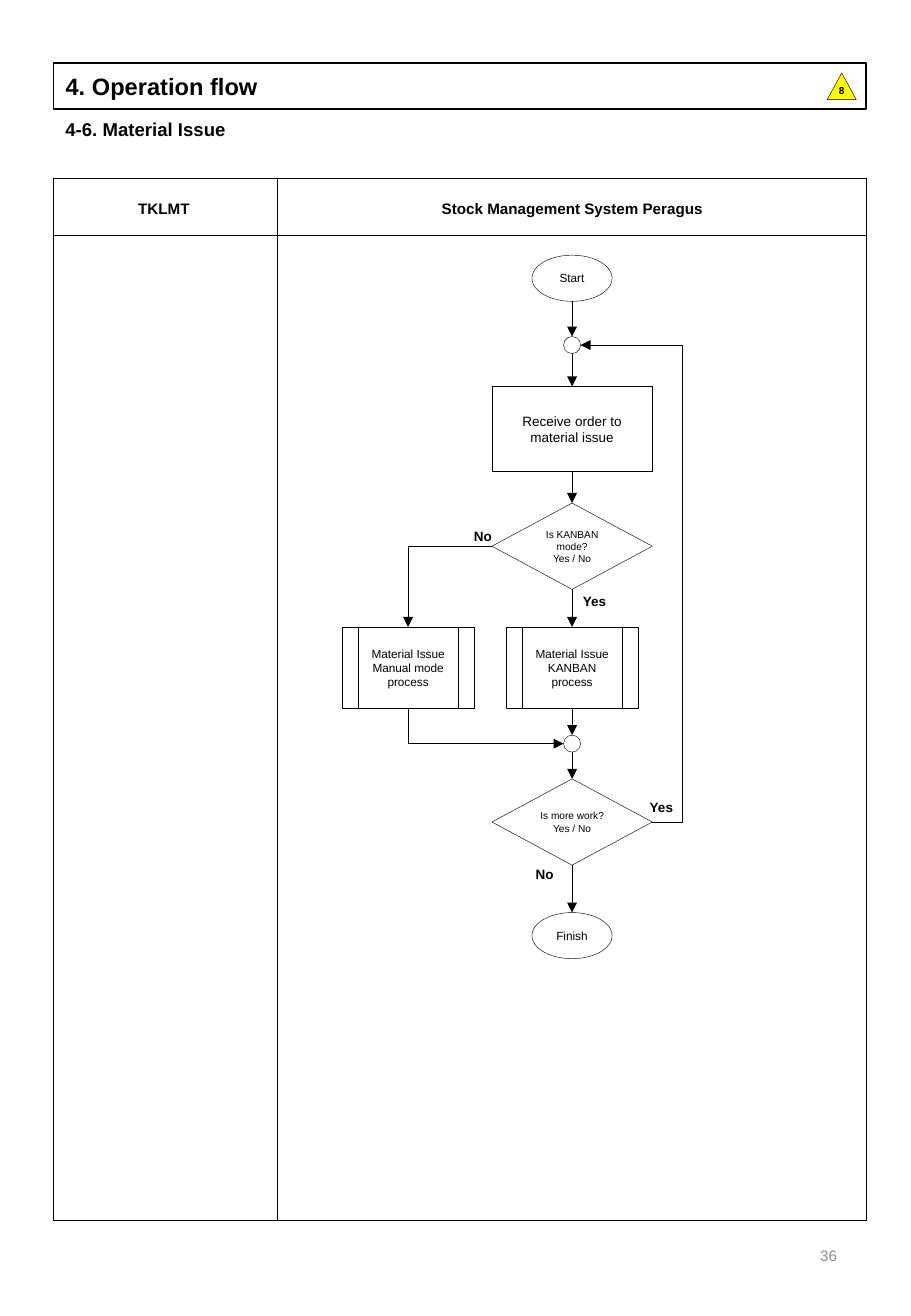
from pptx import Presentation, util as u
from pptx.dml.color import RGBColor
from pptx.enum import shapes, text
from pptx.oxml.ns import qn
from lxml import etree

KIND = shapes.MSO_SHAPE
ALIGN = text.PP_ALIGN
ANCHOR = text.MSO_ANCHOR
AXIS = 4.71
MANUAL_AXIS = 3.36


def color(hex_string):
    return RGBColor.from_string(hex_string)


class FlowPage:
    """Draws flowchart elements on one slide in a single style."""

    font = "Arial"
    ink = "000000"

    def __init__(self, slide):
        self.slide = slide

    def set_text(self, shape, words, size, bold=False, ink=None, align=ALIGN.CENTER,
                 anchor=ANCHOR.MIDDLE, insets=(0.1, 0.05, 0.1, 0.05)):
        frame = shape.text_frame
        frame.text = words
        settings = {"word_wrap": True, "auto_size": text.MSO_AUTO_SIZE.NONE,
                    "vertical_anchor": anchor}
        sides = ("margin_left", "margin_top", "margin_right", "margin_bottom")
        settings.update(zip(sides, map(u.Inches, insets)))
        for name, value in settings.items():
            setattr(frame, name, value)
        for paragraph in frame.paragraphs:
            paragraph.alignment = align
            paragraph.font.color.rgb = color(ink or self.ink)
            for name, value in {"name": self.font, "size": u.Pt(size), "bold": bold}.items():
                setattr(paragraph.font, name, value)

    def outline(self, item, width):
        item.line.color.rgb = color(self.ink)
        item.line.width = u.Pt(width)

    def title(self, words, left, top, width, height):
        shape = self.slide.shapes.title
        for name, value in {"left": left, "top": top, "width": width, "height": height}.items():
            setattr(shape, name, u.Inches(value))
        self.outline(shape, 1)
        self.set_text(shape, words, 14, bold=True, align=ALIGN.LEFT)

    def label(self, words, left, top, width, height, size, **style):
        box = self.slide.shapes.add_textbox(*map(u.Inches, (left, top, width, height)))
        self.set_text(box, words, size, **style)

    def shape(self, kind, left, top, width, height, words="", size=7, fill=None, **style):
        shape = self.slide.shapes.add_shape(kind, *map(u.Inches, (left, top, width, height)))
        shape.shadow.inherit = False
        if fill:
            shape.fill.solid()
            shape.fill.fore_color.rgb = color(fill)
        else:
            shape.fill.background()
        self.outline(shape, 0.25)
        if words:
            self.set_text(shape, words, size, **style)
        return shape

    def node(self, kind, axis, top, width, height, words="", size=7, **style):
        return self.shape(kind, axis - width / 2, top, width, height, words, size, **style)

    def line(self, start, end, kind=shapes.MSO_CONNECTOR.STRAIGHT, arrow=True):
        connector = self.slide.shapes.add_connector(kind, *map(u.Inches, start + end))
        self.outline(connector, 0.5)
        properties = connector._element.spPr
        if arrow:
            etree.SubElement(properties.find(qn("a:ln")), qn("a:tailEnd"), type="triangle")
        etree.SubElement(properties, qn("a:effectLst"))
        return connector

    def bend(self, start, end, turn):
        connector = self.line(start, end, shapes.MSO_CONNECTOR.ELBOW)
        guides = connector._element.spPr.find(qn("a:prstGeom")).find(qn("a:avLst"))
        etree.SubElement(guides, qn("a:gd"), name="adj1", fmla=f"val {round(turn * 100000)}")

    def step(self, source, target):
        start = (source.left + source.width / 2, source.top + source.height)
        end = (target.left + target.width / 2, target.top)
        connector = self.line(*(tuple(u.Emu(round(value)).inches for value in point)
                                for point in (start, end)))
        if source.auto_shape_type != KIND.OVAL:
            connector.begin_connect(source, 2)
        if target.auto_shape_type != KIND.OVAL:
            connector.end_connect(target, 0)


def main():
    presentation = Presentation()
    presentation.slide_width = u.Inches(7.5)
    presentation.slide_height = u.Inches(10.83)
    page = FlowPage(presentation.slides.add_slide(presentation.slide_layouts[5]))

    page.title("4. Operation flow", 0.44, 0.52, 6.69, 0.38)
    page.label("4-6. Material Issue", 0.44, 0.92, 6.69, 0.29, 11, bold=True,
               align=ALIGN.LEFT, anchor=ANCHOR.TOP)
    page.shape(KIND.ISOSCELES_TRIANGLE, 6.81, 0.6, 0.24, 0.22, "8", 6, fill="FFFF00",
               bold=True, insets=(0.1, 0, 0.1, 0.05))
    page.label("36", 5.3, 10.04, 1.69, 0.58, 9, ink="8C8C8C", align=ALIGN.RIGHT)

    for height in (8.57, 0.47):
        page.shape(KIND.RECTANGLE, 0.44, 1.47, 6.69, height)
    page.line((2.28, 1.47), (2.28, 10.04), arrow=False)
    for words, left, width in (("TKLMT", 0.43, 1.84),
                               ("Stock Management System Peragus", 2.29, 4.84)):
        page.label(words, left, 1.48, width, 0.47, 9, bold=True)

    terminal, joint, process = (0.66, 0.38), (0.14, 0.14), (1.09, 0.67)
    decision = (1.32, 0.71)
    tight = (0, 0.05, 0, 0.05)
    main_flow = [
        page.node(KIND.OVAL, AXIS, 2.1, *terminal, "Start"),
        page.node(KIND.OVAL, AXIS, 2.77, *joint),
        page.node(KIND.RECTANGLE, AXIS, 3.18, 1.32, 0.7, "Receive order to material issue", 8),
        page.node(KIND.FLOWCHART_DECISION, AXIS, 4.14, *decision,
                  "Is KANBAN mode?\nYes / No", 6, insets=tight),
        page.node(KIND.FLOWCHART_PREDEFINED_PROCESS, AXIS, 5.16, *process,
                  "Material Issue KANBAN process"),
        page.node(KIND.OVAL, AXIS, 6.05, *joint),
        page.node(KIND.FLOWCHART_DECISION, AXIS, 6.41, *decision,
                  "Is more work?\nYes / No", 6, insets=tight),
        page.node(KIND.OVAL, AXIS, 7.51, *terminal, "Finish"),
    ]
    for source, target in zip(main_flow, main_flow[1:]):
        page.step(source, target)

    page.node(KIND.FLOWCHART_PREDEFINED_PROCESS, MANUAL_AXIS, 5.16, *process,
              "Material Issue Manual mode process")
    page.bend((4.05, 4.5), (MANUAL_AXIS, 5.16), 1)
    page.bend((MANUAL_AXIS, 5.83), (4.64, 6.12), 0)
    page.bend((5.37, 6.77), (4.78, 2.84), -0.42)

    for words, left, top in (("No", 3.72, 4.3), ("Yes", 4.64, 4.83),
                             ("Yes", 5.19, 6.53), ("No", 4.23, 7.08)):
        page.label(words, left, top, 0.51, 0.23, 8, bold=True)

    presentation.save("out.pptx")


if __name__ == "__main__":
    main()
